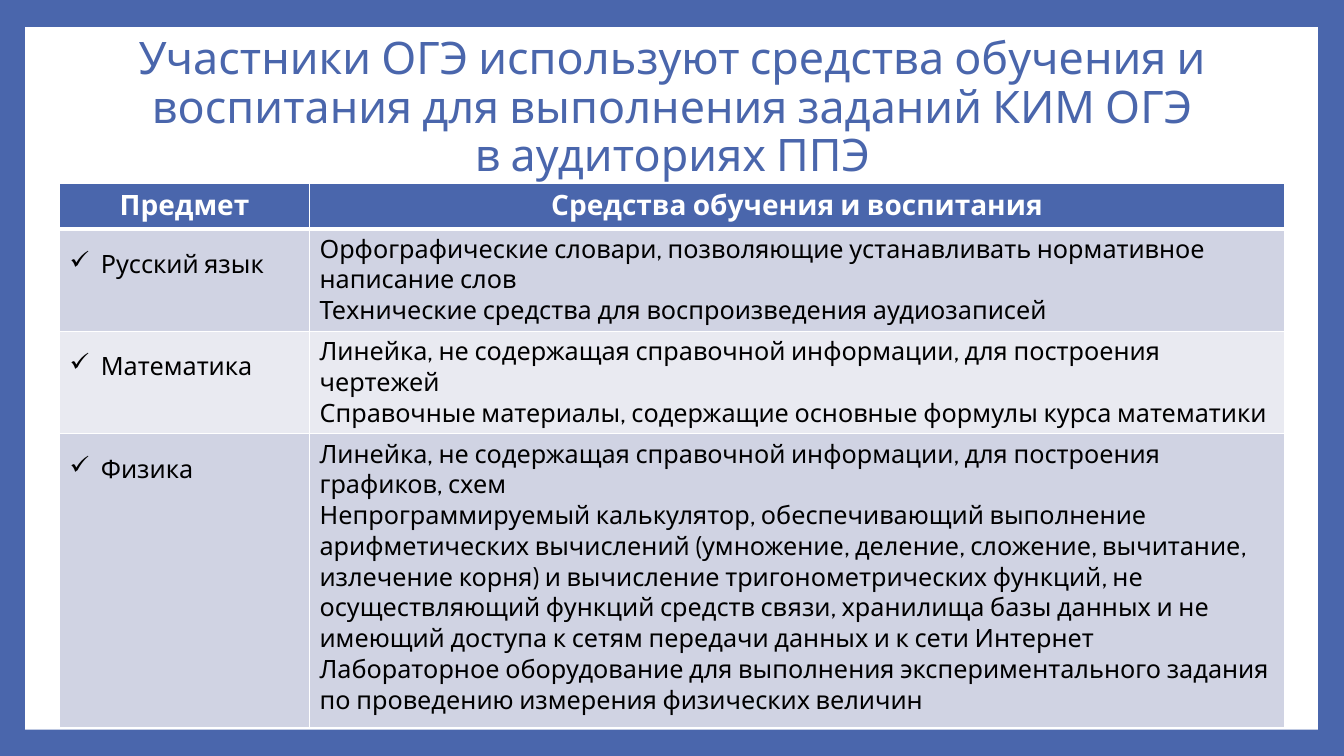
"""Build the slide on study aids allowed at the exam."""
from lxml import etree
from pptx import Presentation
from pptx.dml.color import RGBColor
from pptx.enum.shapes import MSO_SHAPE
from pptx.enum.text import MSO_ANCHOR, MSO_AUTO_SIZE, PP_ALIGN
from pptx.oxml.ns import qn
from pptx.util import Inches, Pt

BLUE = RGBColor(0x4A, 0x66, 0xAC)
WHITE = RGBColor(0xFF, 0xFF, 0xFF)
BLACK = RGBColor(0, 0, 0)
DARK = RGBColor(0xD0, 0xD3, 0xE3)
LIGHT = RGBColor(0xE9, 0xEA, 0xF1)
RECT = MSO_SHAPE.RECTANGLE
MIDDLE = MSO_ANCHOR.MIDDLE
NO_FIT = MSO_AUTO_SIZE.NONE
CENTER = PP_ALIGN.CENTER
FONT = "Cabin"
WIDTHS = [2.48, 9.67]
HEIGHTS = [0.45, 0.77, 0.84, 2.92]
ROWS = [
    ("Предмет", ["Средства обучения и воспитания"]),
    ("Русский язык", [
        "Орфографические словари, позволяющие устанавливать нормативное написание слов",
        "Технические средства для воспроизведения аудиозаписей"]),
    ("Математика", [
        "Линейка, не содержащая справочной информации, для построения чертежей",
        "Справочные материалы, содержащие основные формулы курса математики"]),
    ("Физика", [
        "Линейка, не содержащая справочной информации, для построения графиков, схем",
        "Непрограммируемый калькулятор, обеспечивающий выполнение арифметических "
        "вычислений (умножение, деление, сложение, вычитание, излечение корня) и "
        "вычисление тригонометрических функций, не осуществляющий функций средств "
        "связи, хранилища базы данных и не имеющий доступа к сетям передачи данных "
        "и к сети Интернет",
        "Лабораторное оборудование для выполнения экспериментального задания по "
        "проведению измерения физических величин"]),
]


def style(para, size, color, bold=False):
    """Format every run of a paragraph."""
    for run in para.runs:
        font = run.font
        font.name, font.size, font.bold = FONT, Pt(size), bold
        font.color.rgb = color


def edge(cell, tag, width, spot):
    """Draw one white border of a cell."""
    props = cell._tc.get_or_add_tcPr()
    line = etree.Element(qn("a:" + tag), w=str(Pt(width)))
    fill = etree.SubElement(line, qn("a:solidFill"))
    etree.SubElement(fill, qn("a:srgbClr"), val=str(WHITE))
    props.insert(spot, line)


prs = Presentation()
prs.slide_width, prs.slide_height = Inches(13.33), Inches(7.5)
slide = prs.slides.add_slide(prs.slide_layouts[5])
slide.background.fill.solid()
slide.background.fill.fore_color.rgb = BLUE

panel = slide.shapes.add_shape(
    RECT, Inches(0.25), Inches(0.27), Inches(12.82), Inches(6.97))
panel.shadow.inherit = False
panel.fill.solid()
panel.fill.fore_color.rgb = WHITE
panel.line.fill.background()

title = slide.shapes.title
panel._element.addnext(title._element)
title.left, title.top = Inches(1.27), Inches(0.34)
title.width, title.height = Inches(10.8), Inches(1.48)
frame = title.text_frame
frame.text = ("Участники ОГЭ используют средства обучения и воспитания "
              "для выполнения заданий КИМ ОГЭ в аудиториях ППЭ")
frame.word_wrap = True
frame.auto_size = NO_FIT
frame.vertical_anchor = MIDDLE
head = frame.paragraphs[0]
head.alignment, head.line_spacing = CENTER, 0.9
style(head, 32, BLUE)

table = slide.shapes.add_table(
    len(ROWS), len(WIDTHS), Inches(0.59), Inches(1.82),
    Inches(sum(WIDTHS)), Inches(sum(HEIGHTS))).table
for col, width in zip(table.columns, WIDTHS):
    col.width = Inches(width)
for row, height in zip(table.rows, HEIGHTS):
    row.height = Inches(height)

for r, (subject, aids) in enumerate(ROWS):
    for c, lines in enumerate([[subject], aids]):
        cell = table.cell(r, c)
        cell.fill.solid()
        cell.fill.fore_color.rgb = BLUE if r == 0 else DARK if r % 2 else LIGHT
        widths = {"lnL": 1, "lnR": 1, "lnT": 3 if r == 1 else 1,
                  "lnB": 3 if r == 0 else 1}
        for spot, (tag, width) in enumerate(widths.items()):
            edge(cell, tag, width, spot)
        cell.text_frame.text = "\n".join(lines)
        for para in cell.text_frame.paragraphs:
            if r == 0:
                para.alignment = CENTER
                style(para, 20, WHITE, True)
                continue
            style(para, 18, BLACK)
            if c == 0:
                para.line_spacing = 1.5
                props = para._p.get_or_add_pPr()
                props.set("marL", str(Inches(0.31)))
                props.set("indent", str(-Inches(0.31)))
                etree.SubElement(props, qn("a:buChar"), char="✓")

prs.save("out.pptx")
